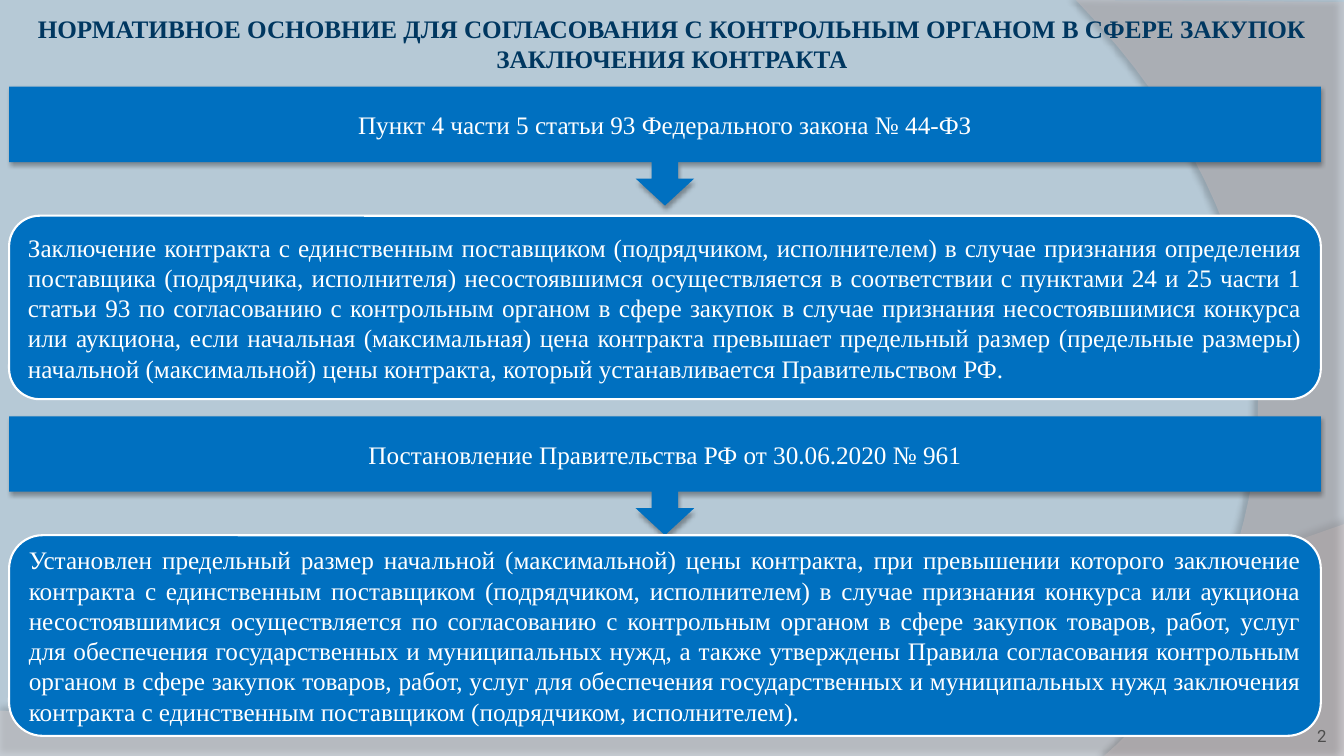
from lxml import etree
from pptx import Presentation
from pptx.dml.color import RGBColor
from pptx.enum.shapes import MSO_SHAPE
from pptx.enum.text import MSO_ANCHOR, PP_ALIGN
from pptx.oxml.ns import qn
from pptx.util import Emu, Pt

COLS, ROWS = 1333, 750
CELL = Emu(9144)
BACK = RGBColor(0xB6, 0xC9, 0xD6)
NAVY = RGBColor(0x00, 0x37, 0x60)
BLUE = RGBColor(0x00, 0x70, 0xC0)
WHITE = RGBColor(0xFF, 0xFF, 0xFF)
GREY = RGBColor(0x4D, 0x4D, 0x4D)
PALE = RGBColor(0xDA, 0xD0, 0xCF)
DUSK = RGBColor(0xCC, 0xBF, 0xBF)
SERIF = "Times New Roman"

TITLE = ("НОРМАТИВНОЕ ОСНОВНИЕ ДЛЯ СОГЛАСОВАНИЯ С КОНТРОЛЬНЫМ ОРГАНОМ "
         "В СФЕРЕ ЗАКУПОК ЗАКЛЮЧЕНИЯ КОНТРАКТА")
LAW = "Пункт 4 части 5 статьи 93 Федерального закона № 44-ФЗ"
LAW_TEXT = (
    "Заключение контракта с единственным поставщиком (подрядчиком, исполнителем) "
    "в случае признания определения поставщика (подрядчика, исполнителя) "
    "несостоявшимся осуществляется в соответствии с пунктами 24 и 25 части 1 "
    "статьи 93 по согласованию с контрольным органом в сфере закупок в случае "
    "признания несостоявшимися конкурса или аукциона, если начальная "
    "(максимальная) цена контракта превышает предельный размер (предельные "
    "размеры) начальной (максимальной) цены контракта, который устанавливается "
    "Правительством РФ.")
ORDER = "Постановление Правительства РФ от 30.06.2020 № 961"
ORDER_TEXT = (
    "Установлен предельный размер начальной (максимальной) цены контракта, при "
    "превышении которого заключение контракта с единственным поставщиком "
    "(подрядчиком, исполнителем) в случае признания конкурса или аукциона "
    "несостоявшимися осуществляется по согласованию с контрольным органом в "
    "сфере закупок товаров, работ, услуг для обеспечения государственных и "
    "муниципальных нужд, а также утверждены Правила согласования контрольным "
    "органом в сфере закупок товаров, работ, услуг для обеспечения "
    "государственных и муниципальных нужд заключения контракта с единственным "
    "поставщиком (подрядчиком, исполнителем).")


def grid(*cells):
    return [Emu(round(cell * CELL)) for cell in cells]


def cast(shape, alpha, blur, dist, angle):
    shape.shadow.inherit = False
    effects = shape._element.spPr.find(qn("a:effectLst"))
    outer = etree.SubElement(
        effects, qn("a:outerShdw"), blurRad=str(Pt(blur)), dist=str(Pt(dist)),
        dir=str(angle * 60000), algn="ctr", rotWithShape="0")
    black = etree.SubElement(outer, qn("a:srgbClr"), val="000000")
    etree.SubElement(black, qn("a:alpha"), val=str(alpha * 1000))


def paint(shape, color):
    shape.shadow.inherit = False
    shape.fill.solid()
    shape.fill.fore_color.rgb = color
    shape.line.fill.background()


def write(shape, text, color, align, size=18, font=SERIF, bold=False):
    frame = shape.text_frame
    frame.word_wrap = True
    frame.vertical_anchor = MSO_ANCHOR.MIDDLE
    para = frame.paragraphs[0]
    para.alignment = align
    run = para.add_run()
    run.text = text
    run.font.size = Pt(size)
    run.font.name = font
    run.font.bold = bold
    run.font.color.rgb = color
    return frame


def curve(a, b, c, d, steps=40):
    for i in range(1, steps + 1):
        t = i / steps
        u = 1 - t
        yield tuple(u**3 * p + 3 * u * u * t * q + 3 * u * t * t * r + t**3 * s
                    for p, q, r, s in zip(a, b, c, d))


def wave(slide, points, color, alpha, shade):
    start, *rest = [grid(*point) for point in points]
    outline = slide.shapes.build_freeform(*start)
    outline.add_line_segments(rest, close=True)
    shape = outline.convert_to_shape()
    paint(shape, color)
    tint = shape._element.spPr.find(qn("a:solidFill"))[0]
    etree.SubElement(tint, qn("a:alpha"), val=str(alpha * 1000))
    cast(shape, *shade)


def backdrop(slide):
    slide.background.fill.solid()
    slide.background.fill.fore_color.rgb = BACK
    floor = [(0, 705), (0, ROWS), (COLS, ROWS), (COLS, 520)]
    floor += curve(floor[-1], (745, 729), (521, 719), floor[0])
    wave(slide, floor, PALE, 45, (35, 4, 3.5, 270))
    side = [(COLS, 2), (COLS, ROWS), (1095, ROWS)]
    side += curve(side[-1], (1246, 619), (1357, 300), (1067, 0))
    wave(slide, side, DUSK, 40, (45, 4, 4, 180))


def heading(slide, box):
    frame = write(slide.shapes.add_textbox(*grid(*box)), TITLE, NAVY,
                  PP_ALIGN.CENTER, bold=True)
    frame.vertical_anchor = MSO_ANCHOR.TOP
    frame.margin_left = frame.margin_right = 5 * CELL
    frame.margin_top = frame.margin_bottom = 0


def section(slide, box, gap, head, body):
    left, top, width, height = box
    tall = 118
    call = slide.shapes.add_shape(MSO_SHAPE.DOWN_ARROW_CALLOUT,
                                  *grid(left, top, width, tall))
    for i, share in enumerate((0.223, 0.246, 0.227, 0.634)):
        call.adjustments[i] = share
    paint(call, BLUE)
    cast(call, 32, 3.5, 2.2, 90)
    write(call, head, WHITE, PP_ALIGN.CENTER)
    drop = tall + gap
    panel = slide.shapes.add_shape(
        MSO_SHAPE.ROUNDED_RECTANGLE,
        *grid(left, top + drop, width, height - drop))
    paint(panel, BLUE)
    panel.line.color.rgb = WHITE
    panel.line.width = Pt(1.5)
    write(panel, body, WHITE, PP_ALIGN.JUSTIFY)


def number(slide, box):
    write(slide.shapes.add_textbox(*grid(*box)), "2", GREY,
          PP_ALIGN.CENTER, size=12, font="Roboto")


def main():
    deck = Presentation()
    deck.slide_width, deck.slide_height = grid(COLS, ROWS)
    slide = deck.slides.add_slide(deck.slide_layouts[6])
    backdrop(slide)
    number(slide, (1293, 715, 36, 30))
    heading(slide, (0, 13, COLS, 88))
    section(slide, (9, 86, 1301, 310), 10, LAW, LAW_TEXT)
    section(slide, (9, 413, 1301, 317), 0, ORDER, ORDER_TEXT)
    deck.save("out.pptx")


if __name__ == "__main__":
    main()
